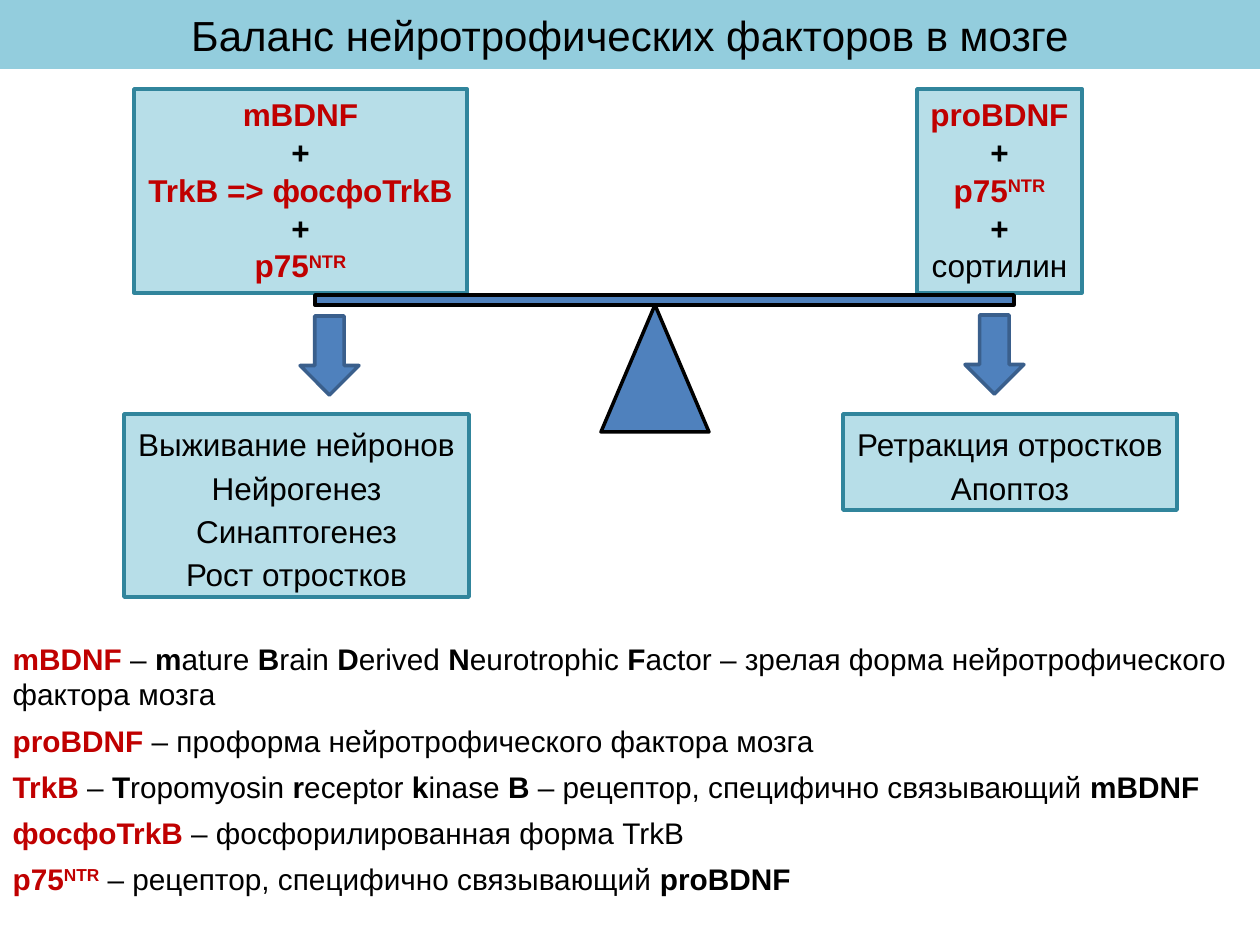
from dataclasses import dataclass
from itertools import groupby

from lxml import etree
from pptx import Presentation
from pptx.dml.color import RGBColor
from pptx.enum.shapes import MSO_SHAPE
from pptx.enum.text import MSO_ANCHOR, MSO_AUTO_SIZE, PP_ALIGN
from pptx.oxml.ns import qn
from pptx.util import Emu, Pt

RECT = MSO_SHAPE.RECTANGLE
PEAK = MSO_SHAPE.ISOSCELES_TRIANGLE
DOWN = MSO_SHAPE.DOWN_ARROW
TOP, MID = MSO_ANCHOR.TOP, MSO_ANCHOR.MIDDLE
LEFT, CENTER = PP_ALIGN.LEFT, PP_ALIGN.CENTER
GROW, FIXED = MSO_AUTO_SIZE.SHAPE_TO_FIT_TEXT, MSO_AUTO_SIZE.NONE


@dataclass(frozen=True)
class Theme:
    face: str = "Arial"
    band: str = "93CDDD"
    pale: str = "B7DEE8"
    teal: str = "31859C"
    blue: str = "4F81BD"
    navy: str = "3A5F8C"
    ink: str = "000000"
    red: str = "C00000"
    head: int = 24
    label: int = 18
    note: int = 17
    edge: int = 2


THEME = Theme()
SCALE = 914400 / 126
BOLD, RED, SUPER = "*", "!", "^"

TITLE = "Баланс нейротрофических факторов в мозге"
NOTES = [
    "!mBDNF! – *m*ature *B*rain *D*erived *N*eurotrophic *F*actor"
    " – зрелая форма нейротрофического фактора мозга",
    "!proBDNF! – проформа нейротрофического фактора мозга",
    "!TrkB! – *T*ropomyosin *r*eceptor *k*inase *B*"
    " – рецептор, специфично связывающий *mBDNF*",
    "!фосфоTrkB !– фосфорилированная форма TrkB",
    "!p75^NTR^! – рецептор, специфично связывающий *proBDNF*",
]
LOADS = [
    ((134, 89, 333, 204),
     ["!mBDNF!", "*+*", "!TrkB => фосфоTrkB!", "*+*", "!p75^NTR^!"]),
    ((917, 89, 165, 204),
     ["!proBDNF!", "*+*", "!p75^NTR^!", "*+*", "сортилин"]),
]
EFFECTS = [
    ((124, 414, 345, 183),
     ["Выживание нейронов", "Нейрогенез", "Синаптогенез", "Рост отростков"]),
    ((843, 414, 334, 96), ["Ретракция отростков", "Апоптоз"]),
]
ARROWS = [(300, 316, 59, 79), (965, 315, 59, 79)]
PIVOT = (601, 305, 108, 127)
BEAM = (315, 295, 699, 10)


def px(n):
    return Emu(round(n * SCALE))


def place(shape, box):
    shape.left, shape.top, shape.width, shape.height = map(px, box)


def paint(shape, color):
    shape.fill.solid()
    shape.fill.fore_color.rgb = RGBColor.from_string(color)


def parse(text):
    active, marked = set(), []
    for char in text:
        if char in (BOLD, RED, SUPER):
            active ^= {char}
        else:
            marked.append((frozenset(active), char))
    for style, group in groupby(marked, key=lambda pair: pair[0]):
        yield style, "".join(char for _, char in group)


def write(frame, lines, size, align=CENTER, space=None, after=0):
    for i, line in enumerate(lines):
        para = frame.add_paragraph() if i else frame.paragraphs[0]
        para.alignment = align
        para.space_before, para.space_after = Pt(0), Pt(after)
        if space:
            para.line_spacing = space
        props = para._p.get_or_add_pPr()
        props.set("marL", "0")
        props.set("indent", "0")
        etree.SubElement(props, qn("a:buNone"))
        para.font.name, para.font.size = THEME.face, Pt(size)
        for style, text in parse(line):
            run = para.add_run()
            run.text = text
            font = run.font
            font.bold = bool(style & {BOLD, RED})
            color = THEME.red if RED in style else THEME.ink
            font.color.rgb = RGBColor.from_string(color)
            if SUPER in style:
                run._r.get_or_add_rPr().set("baseline", "30000")


def draw(slide, kind, box, fill, edge):
    shape = slide.shapes.add_shape(kind, *map(px, box))
    shape.shadow.inherit = False
    paint(shape, fill)
    shape.line.color.rgb = RGBColor.from_string(edge)
    shape.line.width = Pt(THEME.edge)
    return shape


def card(slide, box, lines, space=None):
    frame = draw(slide, RECT, box, THEME.pale, THEME.teal).text_frame
    frame.word_wrap = False
    frame.auto_size = GROW
    frame.vertical_anchor = TOP
    write(frame, lines, THEME.label, space=space)


def main():
    deck = Presentation()
    deck.slide_width, deck.slide_height = px(1260), px(945)
    slide = deck.slides.add_slide(deck.slide_layouts[1])

    title = slide.shapes.title
    place(title, (0, 0, 1260, 69))
    paint(title, THEME.band)
    title.text_frame.auto_size = FIXED
    title.text_frame.vertical_anchor = MID
    write(title.text_frame, [TITLE], THEME.head)

    body = slide.placeholders[1]
    place(body, (0, 634, 1260, 271))
    body.text_frame.word_wrap = True
    body.text_frame.auto_size = GROW
    body.text_frame.vertical_anchor = TOP
    write(body.text_frame, NOTES, THEME.note, align=LEFT, after=6)

    draw(slide, PEAK, PIVOT, THEME.blue, THEME.ink)
    for box, lines in LOADS:
        card(slide, box, lines)
    for box in ARROWS:
        draw(slide, DOWN, box, THEME.blue, THEME.navy)
    for box, lines in EFFECTS:
        card(slide, box, lines, space=1.14)
    draw(slide, RECT, BEAM, THEME.blue, THEME.ink)

    deck.save("out.pptx")


if __name__ == "__main__":
    main()
